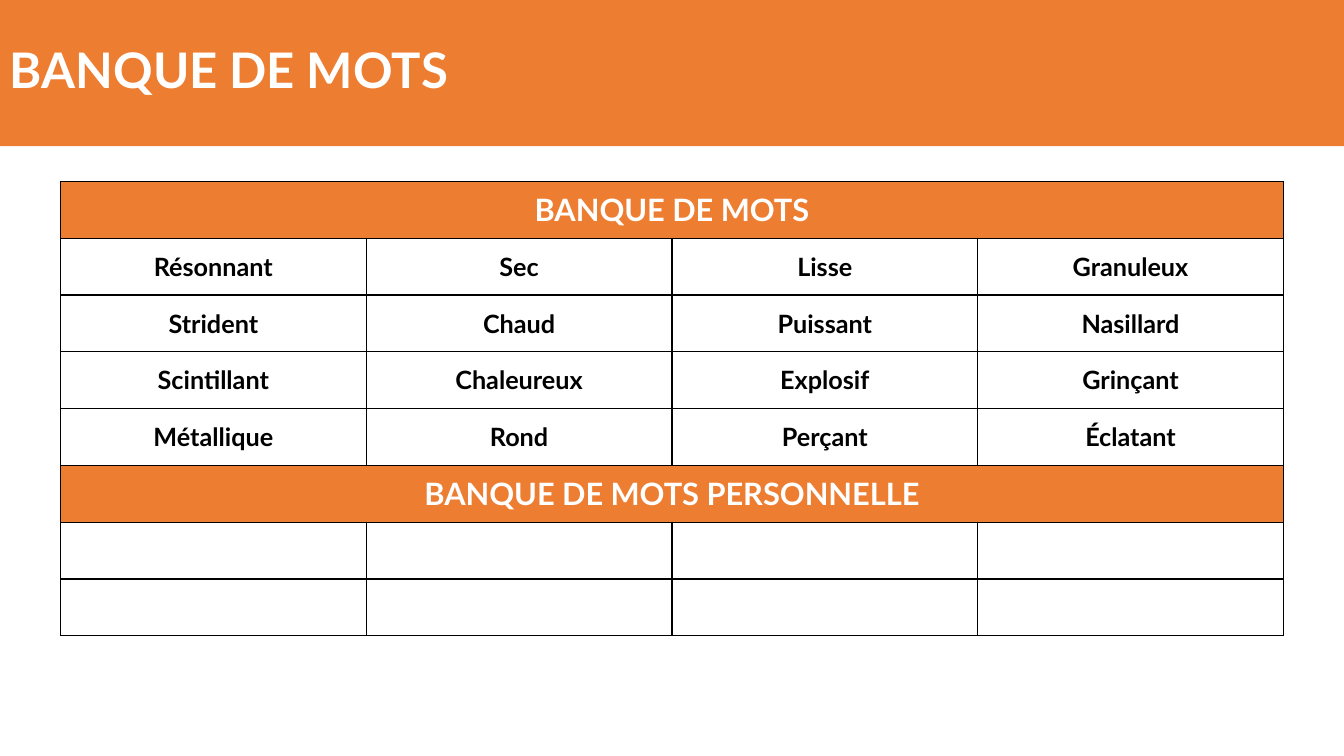
from lxml.etree import SubElement as Sub
from pptx import Presentation
from pptx.dml.color import RGBColor
from pptx.enum.shapes import MSO_SHAPE as Shape
from pptx.enum.text import MSO_ANCHOR as Anchor, PP_ALIGN as Align
from pptx.oxml.ns import qn
from pptx.util import Inches, Pt

ORANGE = RGBColor(0xED, 0x7D, 0x31)
WHITE = RGBColor(0xFF, 0xFF, 0xFF)
BLACK = RGBColor(0, 0, 0)

TITLE = "BANQUE DE MOTS"
WORDS = [
    ["Résonnant", "Sec", "Lisse", "Granuleux"],
    ["Strident", "Chaud", "Puissant", "Nasillard"],
    ["Scintillant", "Chaleureux", "Explosif", "Grinçant"],
    ["Métallique", "Rond", "Perçant", "Éclatant"],
]
COLS = 4
BLANK = [""] * COLS
ROWS = [[TITLE], *WORDS, ["BANQUE DE MOTS PERSONNELLE"], BLANK, BLANK]


class Page:
    font = "Lato"

    def __init__(self, slide):
        self.slide = slide

    def label(self, frame, text, size, color, align):
        para = frame.paragraphs[0]
        para.text = text
        para.alignment = align
        para.font.name = self.font
        para.font.size = Pt(size)
        para.font.bold = True
        para.font.color.rgb = color
        return para

    def banner(self, text, width, height):
        bar = self.slide.shapes.add_shape(
            Shape.RECTANGLE, 0, 0, Inches(width), Inches(height))
        bar.shadow.inherit = False
        bar.fill.solid()
        bar.fill.fore_color.rgb = ORANGE
        bar.line.fill.background()
        frame = bar.text_frame
        frame.word_wrap = True
        frame.vertical_anchor = Anchor.MIDDLE
        para = self.label(frame, text, 35, WHITE, Align.LEFT)
        para.line_spacing = 0.9

    def border(self, cell):
        props = cell._tc.get_or_add_tcPr()
        for side in ("lnL", "lnR", "lnT", "lnB"):
            line = Sub(props, qn(f"a:{side}"), w=str(Pt(1)))
            fill = Sub(line, qn("a:solidFill"))
            Sub(fill, qn("a:srgbClr"), val=str(BLACK))

    def cell(self, cell, text, head):
        self.border(cell)
        cell.fill.solid()
        cell.fill.fore_color.rgb = ORANGE if head else WHITE
        cell.vertical_anchor = Anchor.MIDDLE
        if text:
            size, color = (22, WHITE) if head else (18, BLACK)
            self.label(cell.text_frame, text, size, color, Align.CENTER)

    def table(self, rows, left, top, width, height):
        grid = self.slide.shapes.add_table(
            len(rows), COLS, Inches(left), Inches(top),
            Inches(width), Inches(height)).table
        for r, row in enumerate(rows):
            head = len(row) == 1
            if head:
                grid.cell(r, 0).merge(grid.cell(r, COLS - 1))
            for c in range(COLS):
                text = row[c] if c < len(row) else ""
                self.cell(grid.cell(r, c), text, head)


def main():
    deck = Presentation()
    deck.slide_width = Inches(13.33)
    deck.slide_height = Inches(7.5)
    page = Page(deck.slides.add_slide(deck.slide_layouts[6]))
    page.banner(TITLE, 13.33, 1.45)
    page.table(ROWS, 0.6, 1.8, 12.13, 4.51)
    deck.save("out.pptx")


if __name__ == "__main__":
    main()
